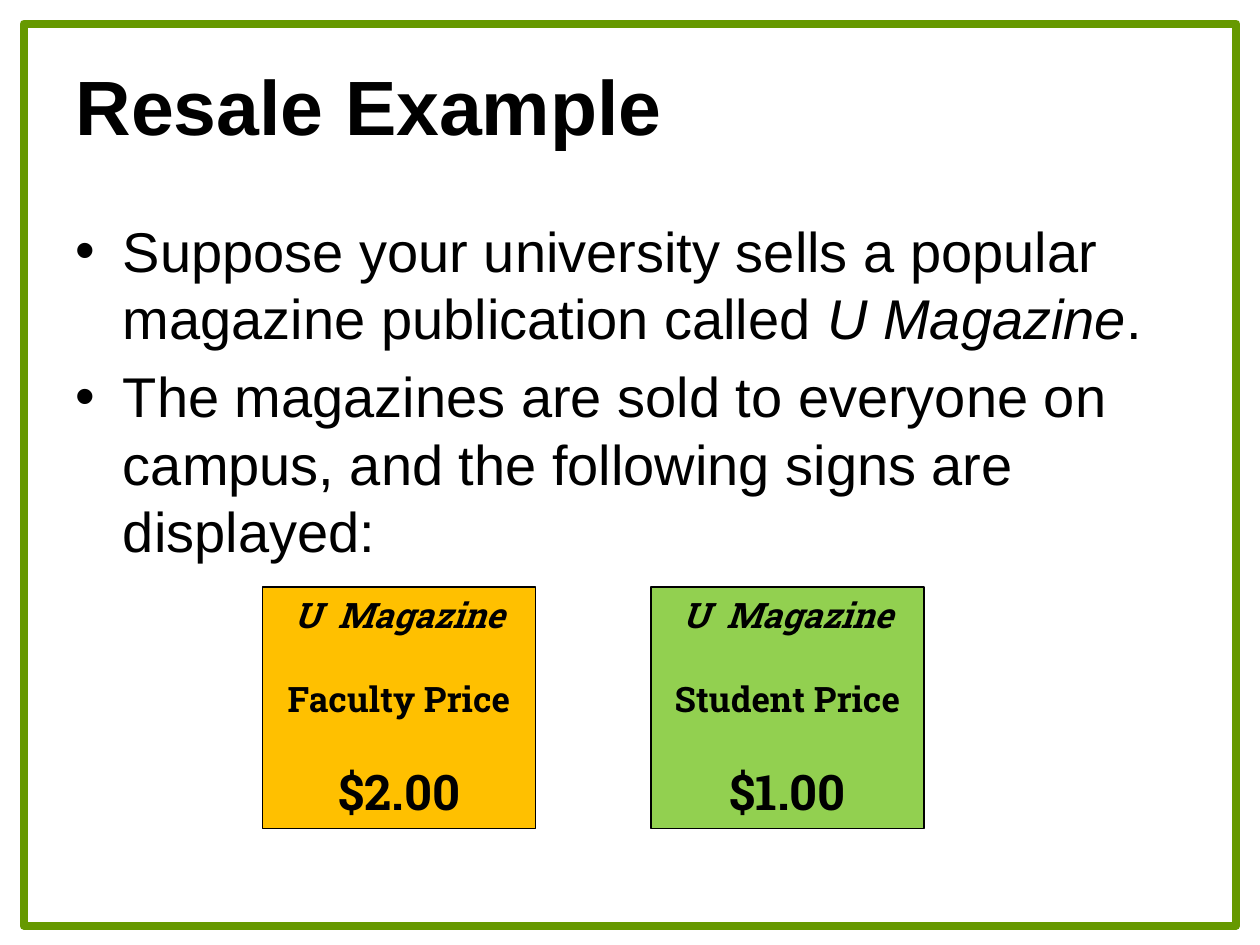
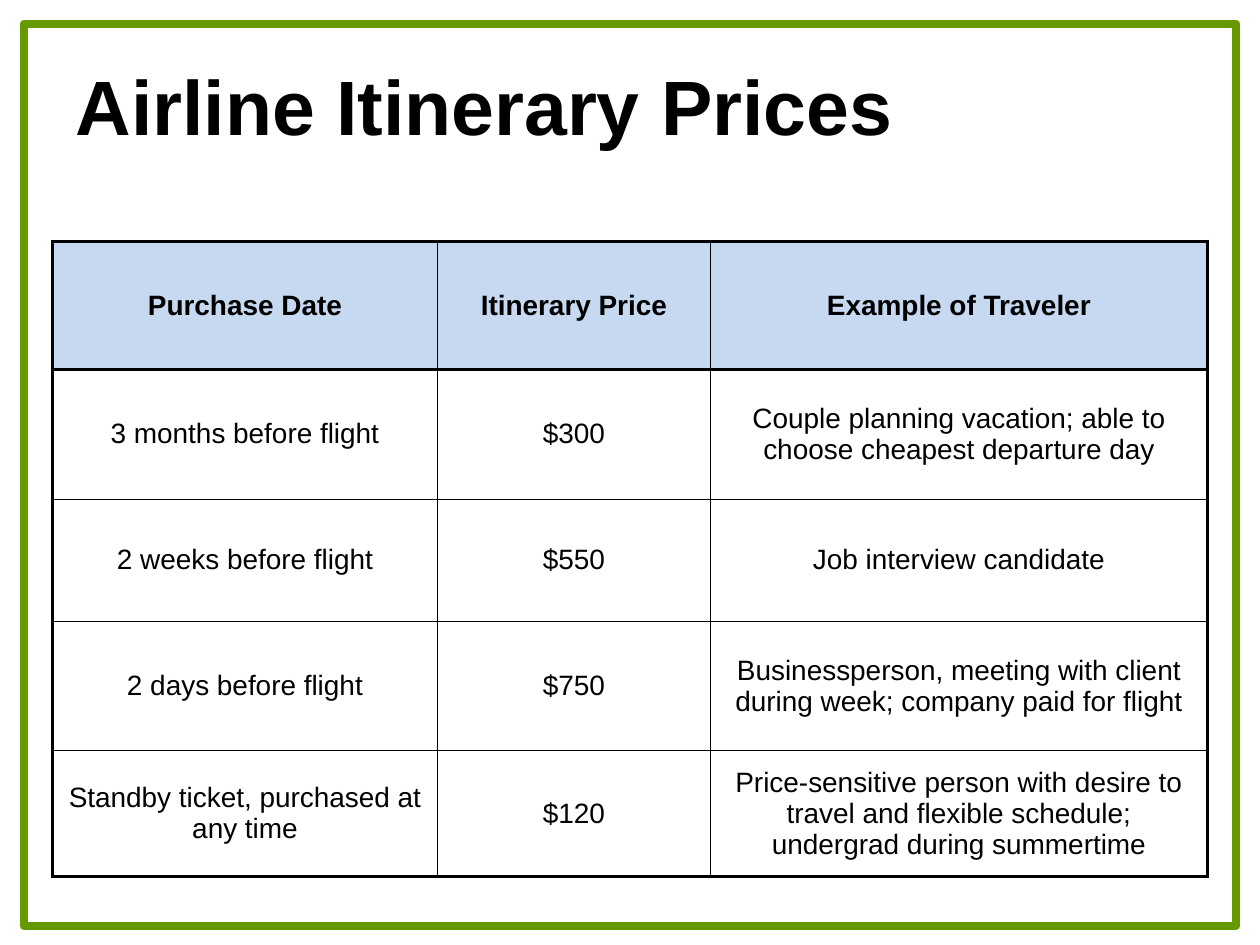
from lxml.etree import SubElement
from pptx import Presentation
from pptx.dml.color import RGBColor
from pptx.enum.shapes import MSO_SHAPE
from pptx.enum.text import MSO_ANCHOR, MSO_AUTO_SIZE, PP_ALIGN
from pptx.oxml import parse_xml
from pptx.oxml.ns import nsdecls, qn
from pptx.util import Pt

BLACK = "000000"
WHITE = "FFFFFF"
GREEN = "669900"
AMBER = "FFC000"
LIME = "92D050"
BLUE = "C6D9F1"
SANS = "Arial"
SLAB = "Roboto Slab"
THICK, THIN = 2.25, 0.25
FRAME = (13.5, 13.5, 693, 515.5)
TITLE = (36, 0, 648, 120)
BODY = (36, 120, 648, 170)
SIGNS = (150, 335.5, 378, 138)
TABLE = (30, 138, 660, 363)


def color(code):
    return RGBColor.from_string(code)


def style(para, size, face=SANS, bold=False, italic=False):
    for run in para.runs:
        font = run.font
        font.name = face
        font.size = Pt(size)
        font.bold = bold
        font.italic = italic
        font.color.rgb = color(BLACK)


def place(shape, box):
    shape.left, shape.top, shape.width, shape.height = map(Pt, box)


def draw_rect(slide, box, edge, weight, fill=None):
    rect = slide.shapes.add_shape(MSO_SHAPE.RECTANGLE, *map(Pt, box))
    rect.shadow.inherit = False
    rect.line.color.rgb = color(edge)
    rect.line.width = Pt(weight)
    if fill:
        rect.fill.solid()
        rect.fill.fore_color.rgb = color(fill)
    else:
        rect.fill.background()
    return rect


def start_slide(deck, layout, title):
    slide = deck.slides.add_slide(deck.slide_layouts.get_by_name(layout))
    slide.background.fill.solid()
    slide.background.fill.fore_color.rgb = color(WHITE)
    frame = draw_rect(slide, FRAME, GREEN, 4.5)
    SubElement(frame.element.spPr.find(qn("a:ln")), qn("a:round"))
    head = slide.shapes.title
    place(head, TITLE)
    text = head.text_frame
    text.text = title
    text.auto_size = MSO_AUTO_SIZE.NONE
    text.vertical_anchor = MSO_ANCHOR.MIDDLE
    text.paragraphs[0].alignment = PP_ALIGN.LEFT
    style(text.paragraphs[0], 44, bold=True)
    return slide


def fill_body(slide, box, items):
    body = slide.placeholders[1]
    place(body, box)
    text = body.text_frame
    text.text = "\n".join(parts[0] for parts in items)
    text.auto_size = MSO_AUTO_SIZE.NONE
    for para, parts in zip(text.paragraphs, items):
        for part in parts[1:]:
            para.add_run().text = part
        style(para, 32)
        for run in para.runs[1::2]:
            run.font.italic = True


def draw_sign(slide, box, fill, lines):
    sign = draw_rect(slide, box, BLACK, 0.75, fill)
    text = sign.text_frame
    text.text = "\n".join(lines)
    text.word_wrap = True
    text.vertical_anchor = MSO_ANCHOR.TOP
    for row, para in enumerate(text.paragraphs):
        para.alignment = PP_ALIGN.CENTER
        para.space_before = Pt(24 if row else 0)
        style(para, 28 if row == 2 else 20, SLAB, True, row == 0)


def draw_signs(slide, box, signs):
    left, top, width, height = box
    wide = 156
    step = (width - wide) / (len(signs) - 1)
    for col, (fill, group, price) in enumerate(signs):
        lines = ["U  Magazine", f"{group} Price", price]
        draw_sign(slide, (left + col * step, top, wide, height), fill, lines)


def set_edges(cell, sides):
    props = cell._tc.get_or_add_tcPr()
    for spot, (side, weight) in enumerate(sides.items()):
        line = parse_xml(
            f'<a:ln{side} {nsdecls("a")} w="{Pt(weight)}"><a:solidFill>'
            f'<a:srgbClr val="{BLACK}"/></a:solidFill></a:ln{side}>')
        props.insert(spot, line)


def fill_cell(cell, words, header):
    cell.text = words
    cell.vertical_anchor = MSO_ANCHOR.MIDDLE
    cell.margin_left = cell.margin_right = Pt(5)
    cell.margin_top = cell.margin_bottom = 0
    if header:
        cell.fill.solid()
        cell.fill.fore_color.rgb = color(BLUE)
    else:
        cell.fill.background()
    para = cell.text_frame.paragraphs[0]
    para.alignment = PP_ALIGN.CENTER
    style(para, 16, bold=header)


def draw_table(slide, box, rows, widths, heights):
    deep, wide = len(rows), len(widths)
    table = slide.shapes.add_table(deep, wide, *map(Pt, box)).table
    table.first_row = table.horz_banding = False
    for col, share in zip(table.columns, widths):
        col.width = Pt(box[2] * share / sum(widths))
    for row, share in zip(table.rows, heights):
        row.height = Pt(box[3] * share / sum(heights))
    for r, row in enumerate(rows):
        for c, words in enumerate(row):
            cell = table.cell(r, c)
            fill_cell(cell, words, r == 0)
            set_edges(cell, {
                "L": THICK if c == 0 else THIN,
                "R": THICK if c == wide - 1 else THIN,
                "T": THICK if r < 2 else THIN,
                "B": THICK if r in (0, deep - 1) else THIN,
            })


def resale_slide(deck):
    slide = start_slide(deck, "Title and Content", "Resale Example")
    fill_body(slide, BODY, [
        ["Suppose your university sells a popular magazine publication called ",
         "U Magazine", "."],
        ["The magazines are sold to everyone on campus, and the following "
         "signs are displayed:"],
    ])
    draw_signs(slide, SIGNS, [
        (AMBER, "Faculty", "$2.00"),
        (LIME, "Student", "$1.00"),
    ])


def airline_slide(deck):
    slide = start_slide(deck, "Title Only", "Airline Itinerary Prices")
    rows = [
        ("Purchase Date", "Itinerary Price", "Example of Traveler"),
        ("3 months before flight", "$300",
         "Couple planning vacation; able to choose cheapest departure day"),
        ("2 weeks before flight", "$550", "Job interview candidate"),
        ("2 days before flight", "$750",
         "Businessperson, meeting with client during week; "
         "company paid for flight"),
        ("Standby ticket, purchased at any time", "$120",
         "Price-sensitive person with desire to travel and flexible schedule; "
         "undergrad during summertime"),
    ]
    draw_table(slide, TABLE, rows, (220, 156, 284), (73, 74, 70, 74, 72))


def main():
    deck = Presentation()
    deck.slide_width, deck.slide_height = Pt(720), Pt(540)
    resale_slide(deck)
    airline_slide(deck)
    deck.save("out.pptx")


if __name__ == "__main__":
    main()
